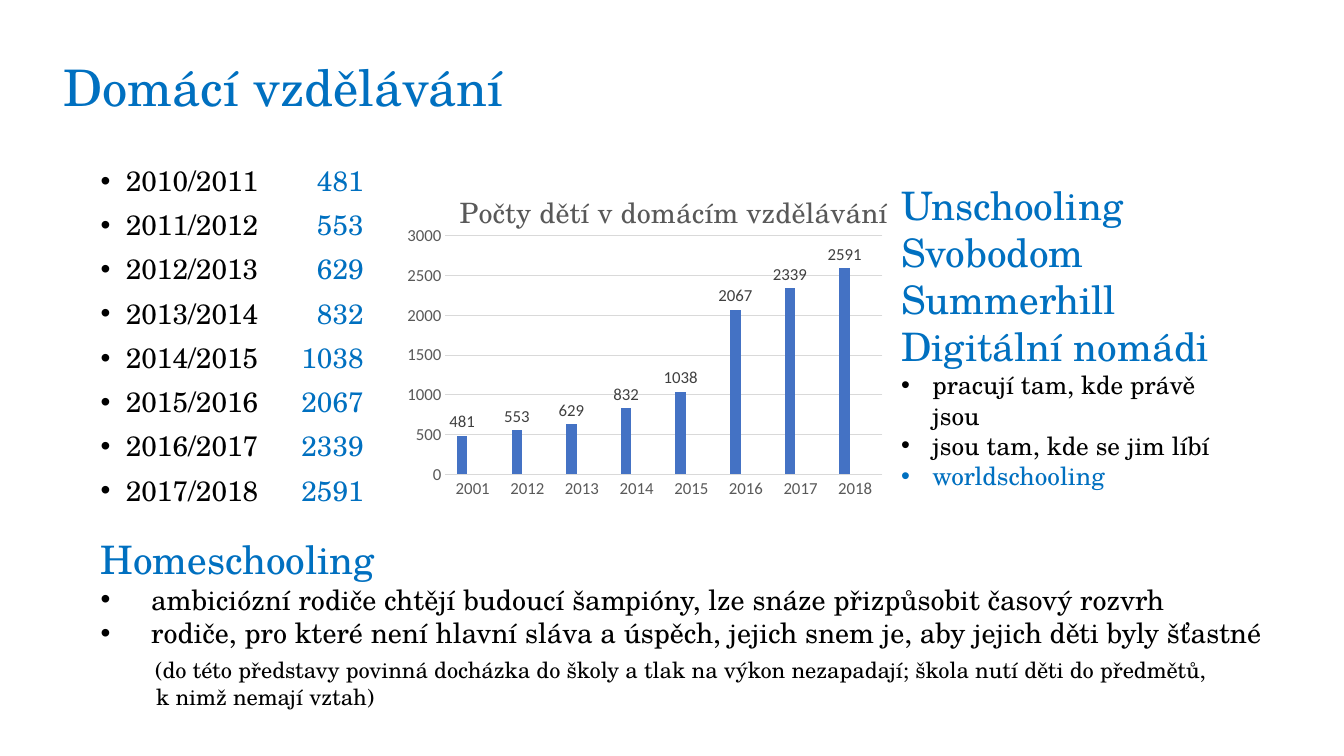
from lxml import etree
from pptx import Presentation
from pptx.chart.data import CategoryChartData
from pptx.dml.color import RGBColor
from pptx.enum.chart import XL_CHART_TYPE, XL_LABEL_POSITION, XL_TICK_MARK
from pptx.enum.text import MSO_ANCHOR, PP_ALIGN
from pptx.oxml import parse_xml
from pptx.oxml.ns import nsdecls, qn
from pptx.util import Inches, Pt

BLUE = "0070C0"
BLACK = "000000"
SERIF = "TeX Gyre Schola"


def style(font, size, color, name=SERIF):
    font.size = Pt(size)
    font.name = name
    font.bold = False
    font.color.rgb = RGBColor.from_string(color)


def indent(para, width, bullet=True):
    properties = para._p.get_or_add_pPr()
    properties.set("marL", str(Inches(width)))
    if bullet:
        properties.set("indent", str(-Inches(width)))
        etree.SubElement(properties, qn("a:buFont"), typeface="Arial")
        etree.SubElement(properties, qn("a:buChar"), char="•")
    return properties


deck = Presentation()
deck.slide_width = Inches(13.33)
deck.slide_height = Inches(7.5)
page = deck.slides.add_slide(deck.slide_layouts[5])

title = page.shapes.title
title.left, title.top = Inches(0.53), Inches(0.34)
title.width, title.height = Inches(11.5), Inches(1.11)
title.text_frame.text = "Domácí vzdělávání"
title.text_frame.vertical_anchor = MSO_ANCHOR.MIDDLE
heading = title.text_frame.paragraphs[0]
heading.alignment = PP_ALIGN.LEFT
heading.line_spacing = 0.9
style(heading.runs[0].font, 36, BLUE)

counts = [481, 553, 629, 832, 1038, 2067, 2339, 2591]
box = page.shapes.add_textbox(Inches(0.9), Inches(1.61), Inches(3.06), Inches(3.6))
frame = box.text_frame
frame.word_wrap = True
for number, count in enumerate(counts):
    para = frame.add_paragraph() if number else frame.paragraphs[0]
    para.text = f"{2010 + number}/{2011 + number}\t"
    tabs = etree.SubElement(indent(para, 0.25), qn("a:tabLst"))
    etree.SubElement(tabs, qn("a:tab"), pos=str(Inches(2.61)), algn="r")
    para.line_spacing = 0.9
    if number:
        para.space_before = Pt(10)
    style(para.runs[0].font, 20, BLACK)
    span = para.add_run()
    span.text = str(count)
    style(span.font, 20, BLUE)

data = CategoryChartData()
data.categories = ["2001"] + [str(year) for year in range(2012, 2019)]
data.add_series("Series 1", counts)
data.add_series("Series 2", [None] * len(counts))
data.add_series("Series 3", [None] * len(counts))
chart = page.shapes.add_chart(
    XL_CHART_TYPE.COLUMN_CLUSTERED,
    Inches(3.72), Inches(1.71), Inches(5.63), Inches(3.29), data,
).chart
style(chart.font, 10, BLACK, "Calibri")
chart.has_legend = False
chart.has_title = True
chart.chart_title.text_frame.text = "Počty dětí v domácím vzdělávání"
caption = chart.chart_title.text_frame.paragraphs[0]
style(caption.font, 20, "595959")
style(caption.runs[0].font, 20, "595959")
chart.chart_title.include_in_layout = False

plot = chart.plots[0]
plot.gap_width = 219
plot.overlap = 0
plot.vary_by_categories = False
for series, color in zip(plot.series, ["4472C4", "ED7D31", "A5A5A5"]):
    series.format.fill.solid()
    series.format.fill.fore_color.rgb = RGBColor.from_string(color)
    labels = series.data_labels
    labels.show_value = True
    labels.position = XL_LABEL_POSITION.OUTSIDE_END
    style(labels.font, 12, "404040", "Calibri")

for axis in (chart.category_axis, chart.value_axis):
    axis.major_tick_mark = XL_TICK_MARK.NONE
    axis.minor_tick_mark = XL_TICK_MARK.NONE
    style(axis.tick_labels.font, 12, "595959", "Calibri")
chart.value_axis.minimum_scale = 0
chart.value_axis.maximum_scale = 3000
chart.value_axis.major_unit = 500
chart.value_axis.format.line.fill.background()
for line in (chart.category_axis.format.line, chart.value_axis.major_gridlines.format.line):
    line.color.rgb = RGBColor.from_string("D9D9D9")
    line.width = Pt(0.75)

title_place = {"xMode": "edge", "yMode": "edge", "x": 0.14, "y": 0.03}
plot_place = {"layoutTarget": "inner", "xMode": "edge", "yMode": "edge",
              "x": 0.124, "y": 0.192, "w": 0.77, "h": 0.719}
plot_area = chart._chartSpace.chart.plotArea
chart_title = chart.chart_title._element
for parent, place, index in ((chart_title, title_place, 1), (plot_area, plot_place, 0)):
    for old in parent.findall(qn("c:layout")):
        parent.remove(old)
    settings = "".join(f'<c:{key} val="{value}"/>' for key, value in place.items())
    parent.insert(index, parse_xml(
        f'<c:layout {nsdecls("c")}><c:manualLayout>{settings}</c:manualLayout></c:layout>'))

homeschooling = [
    ("Homeschooling", 28, BLUE, 0, False),
    ("ambiciózní rodiče chtějí budoucí šampióny, lze snáze přizpůsobit časový rozvrh",
     20, BLACK, 0.5, True),
    ("rodiče, pro které není hlavní sláva a úspěch, jejich snem je, aby jejich děti byly šťastné",
     20, BLACK, 0.5, True),
    ("(do této představy povinná docházka do školy a tlak na výkon nezapadají; škola nutí děti do předmětů,",
     16, BLACK, 0.54, False),
    ("k nimž nemají vztah)", 16, BLACK, 0.55, False),
]
unschooling = [
    ("Unschooling", 28, BLUE, 0, False),
    ("Svobodom", 28, BLUE, 0, False),
    ("Summerhill", 28, BLUE, 0, False),
    ("Digitální nomádi", 28, BLUE, 0, False),
    ("pracují tam, kde právě jsou", 18, BLACK, 0.31, True),
    ("jsou tam, kde se jim líbí", 18, BLACK, 0.31, True),
    ("worldschooling", 18, BLUE, 0.31, True),
]
for left, top, width, height, lines in (
    (0.9, 5.26, 12.02, 1.85, homeschooling),
    (8.84, 1.75, 3.54, 2.89, unschooling),
):
    box = page.shapes.add_textbox(Inches(left), Inches(top), Inches(width), Inches(height))
    frame = box.text_frame
    frame.word_wrap = True
    for number, (text, size, color, margin, bullet) in enumerate(lines):
        para = frame.add_paragraph() if number else frame.paragraphs[0]
        para.text = text
        indent(para, margin, bullet)
        if text.startswith("("):
            para.space_before = Pt(4.5)
        style(para.runs[0].font, size, color)

deck.save("out.pptx")
